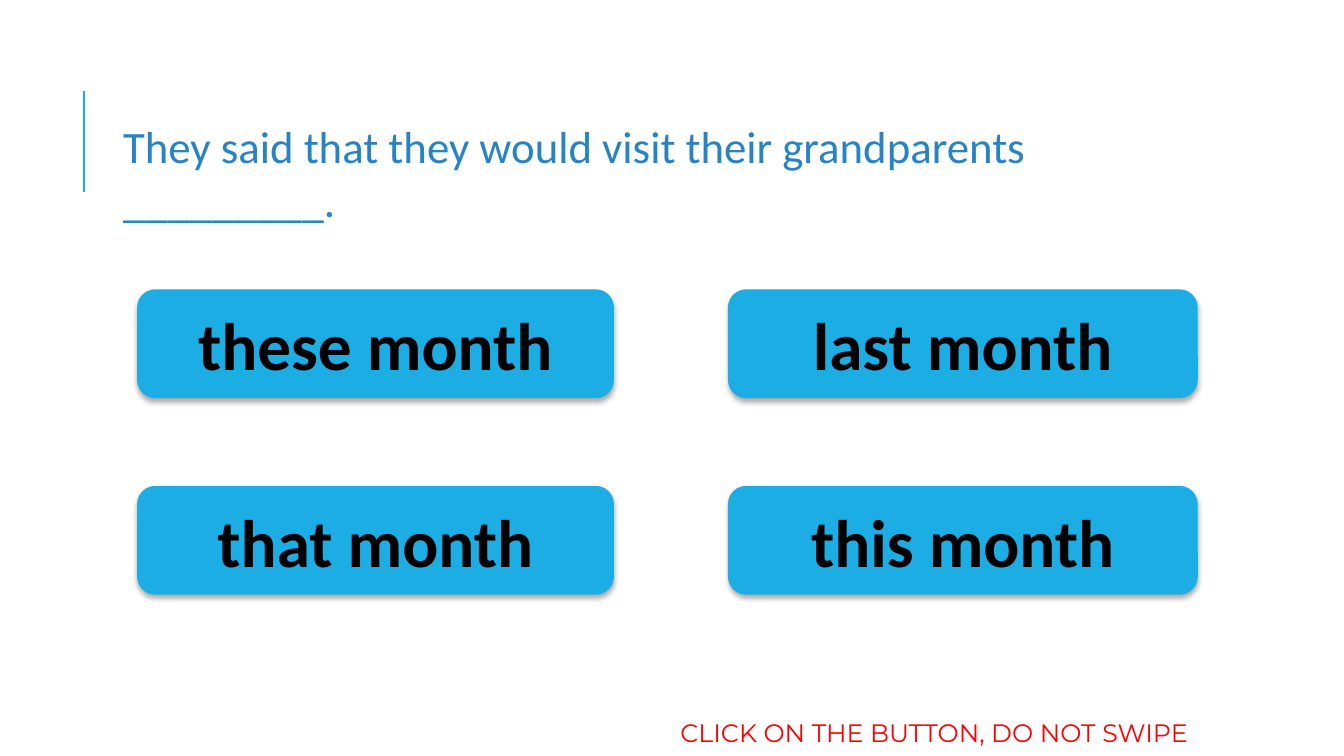
from dataclasses import dataclass

from lxml import etree
from pptx import Presentation
from pptx.dml.color import RGBColor
from pptx.enum.shapes import MSO_CONNECTOR, MSO_SHAPE
from pptx.enum.text import MSO_ANCHOR, MSO_AUTO_SIZE, PP_ALIGN
from pptx.oxml import parse_xml
from pptx.oxml.ns import nsdecls, qn
from pptx.util import Inches, Pt


@dataclass(frozen=True)
class Theme:
    accent: RGBColor = RGBColor(0x1C, 0xAD, 0xE4)
    question: RGBColor = RGBColor(0x26, 0x83, 0xC6)
    answer: RGBColor = RGBColor(0, 0, 0)
    hint: RGBColor = RGBColor(0xFF, 0, 0)
    question_size: int = 32
    answer_size: int = 48
    hint_size: int = 18
    text_font: str = "Calibri"
    hint_font: str = "Montserrat"


THEME = Theme()
SHADOW = f"""<a:effectLst {nsdecls("a")}>
  <a:outerShdw blurRad="{Pt(3.5)}" dist="{Pt(2.2)}" dir="5400000" algn="ctr" rotWithShape="0">
    <a:srgbClr val="000000"><a:alpha val="32000"/></a:srgbClr>
  </a:outerShdw>
</a:effectLst>"""


def write(shape, text, font, size, color, align=PP_ALIGN.LEFT, bold=False, **frame_format):
    """Put one formatted line of text into a shape."""
    frame = shape.text_frame
    for name, value in frame_format.items():
        setattr(frame, name, value)
    line = frame.paragraphs[0]
    line.alignment = align
    run = line.add_run()
    run.text = text
    for name, value in {"name": font, "size": Pt(size), "bold": bold}.items():
        setattr(run.font, name, value)
    run.font.color.rgb = color


prs = Presentation()
prs.slide_width, prs.slide_height = Inches(13.33), Inches(7.5)
slide = prs.slides.add_slide(prs.slide_layouts[5])
shapes = slide.shapes
one_line = {"word_wrap": False, "auto_size": MSO_AUTO_SIZE.SHAPE_TO_FIT_TEXT}

# Question with its accent rule
rule = shapes.add_connector(
    MSO_CONNECTOR.STRAIGHT, Inches(0.83), Inches(1.9), Inches(0.83), Inches(0.9))
rule.line.color.rgb = THEME.accent
rule.line.width = Pt(1.5)
etree.SubElement(rule._element.spPr, qn("a:effectLst"))

question = shapes.title
question_box = {"left": 1.12, "top": 1.13, "width": 11.36, "height": 0.64}
for name, value in question_box.items():
    setattr(question, name, Inches(value))
write(question, "They said that they would visit their grandparents _________.",
      THEME.text_font, THEME.question_size, THEME.question,
      vertical_anchor=MSO_ANCHOR.TOP, **one_line)

# Answer buttons
answers = [("these month", "last month"), ("that month", "this month")]
columns = [(1.36, 4.73), (7.22, 4.66)]
first_top, row_step, button_height = 2.87, 1.95, 1.08
for row, row_answers in enumerate(answers):
    for answer, (left, width) in zip(row_answers, columns):
        button = shapes.add_shape(
            MSO_SHAPE.ROUNDED_RECTANGLE, Inches(left), Inches(first_top + row * row_step),
            Inches(width), Inches(button_height))
        button.fill.solid()
        button.fill.fore_color.rgb = THEME.accent
        button.line.fill.background()
        button._element.spPr.append(parse_xml(SHADOW))
        write(button, answer, THEME.text_font, THEME.answer_size, THEME.answer,
              align=PP_ALIGN.CENTER, bold=True, vertical_anchor=MSO_ANCHOR.MIDDLE)

# Hint
hint = shapes.add_textbox(Inches(6.65), Inches(7.07), Inches(5.73), Inches(0.4))
write(hint, "CLICK ON THE BUTTON, DO NOT SWIPE",
      THEME.hint_font, THEME.hint_size, THEME.hint, **one_line)

prs.save("out.pptx")
